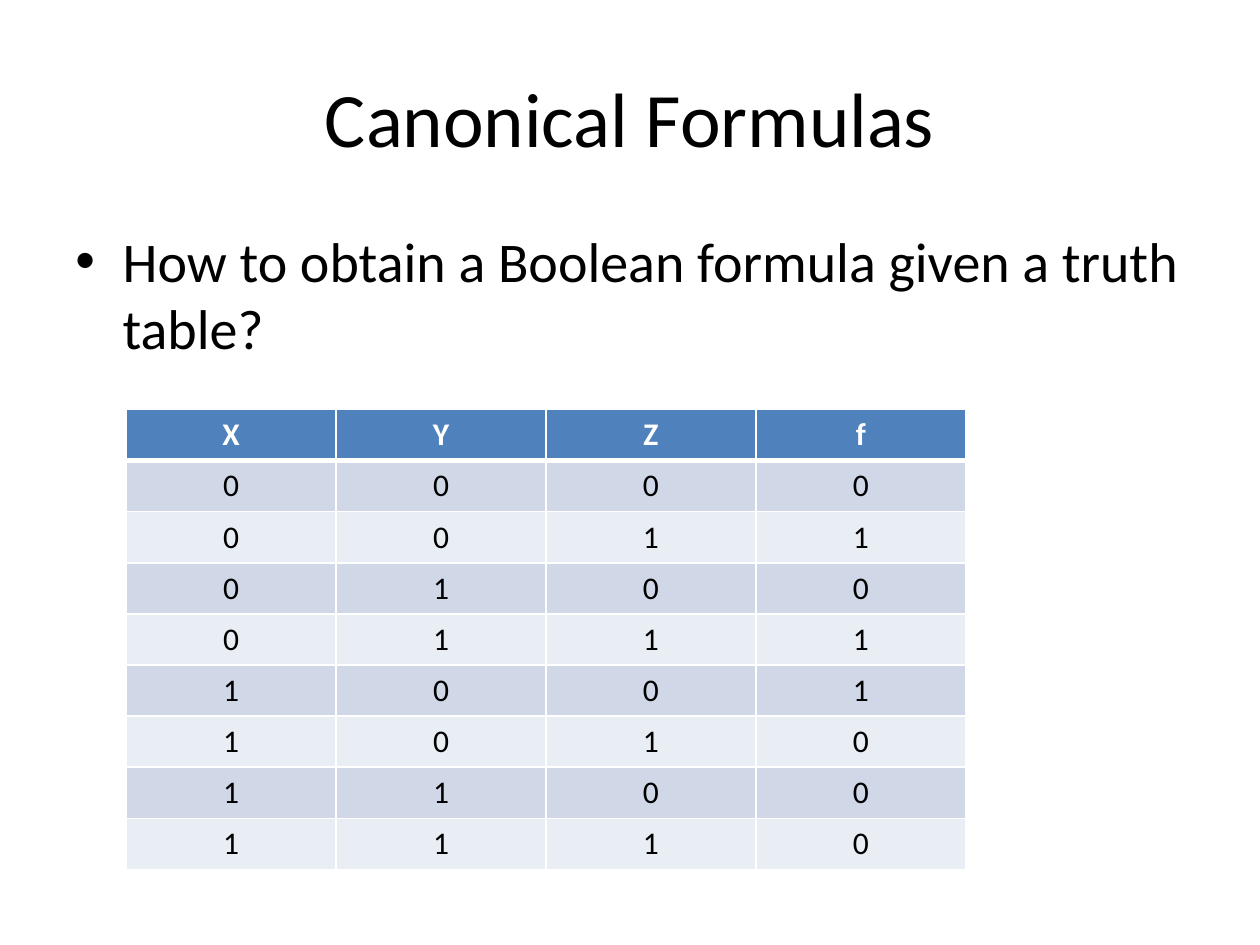
from itertools import product

from lxml import etree
from pptx import Presentation
from pptx.dml.color import RGBColor
from pptx.enum import text
from pptx.oxml import ns
from pptx.util import Pt

COLOURS = {
    "ink": "000000",
    "paper": "FFFFFF",
    "header": "4F81BD",
    "odd": "D0D8E8",
    "even": "E9EDF4",
}
OUTPUTS = [0, 1, 0, 1, 1, 0, 0, 0]


def add_element(parent, tag, **attributes):
    return etree.SubElement(parent, ns.qn(tag), attributes)


class SlideBuilder:
    font = "Calibri"

    def __init__(self, page):
        self.page = page

    def add_span(self, para, words, size, colour="ink", bold=False):
        span = para.add_run()
        span.text = words
        span.font.name = self.font
        span.font.size = Pt(size)
        span.font.bold = bold
        span.font.color.rgb = RGBColor.from_string(COLOURS[colour])

    def add_box(self, left, top, width, height, anchor):
        box = self.page.shapes.add_textbox(Pt(left), Pt(top), Pt(width), Pt(height))
        box.text_frame.word_wrap = True
        box.text_frame.vertical_anchor = anchor
        return box.text_frame.paragraphs[0]

    def add_title(self, words, left, top, width, height):
        para = self.add_box(left, top, width, height, text.MSO_ANCHOR.MIDDLE)
        para.alignment = text.PP_ALIGN.CENTER
        self.add_span(para, words, 44)

    def add_bullet(self, words, left, top, width, height, indent=27):
        para = self.add_box(left, top, width, height, text.MSO_ANCHOR.TOP)
        self.add_span(para, words, 32)
        properties = para._p.get_or_add_pPr()
        properties.set("marL", str(Pt(indent)))
        properties.set("indent", str(-Pt(indent)))
        spacing = add_element(properties, "a:spcBef")
        add_element(spacing, "a:spcPct", val="20000")
        add_element(properties, "a:buFont", typeface="Arial")
        add_element(properties, "a:buChar", char="•")

    def add_borders(self, cell, top, bottom):
        properties = cell._tc.get_or_add_tcPr()
        for side, width in zip("LRTB", (1, 1, top, bottom)):
            line = add_element(properties, f"a:ln{side}", w=str(Pt(width)))
            fill = add_element(line, "a:solidFill")
            add_element(fill, "a:srgbClr", val=COLOURS["paper"])

    def add_table(self, rows, left, top, column_width, row_height):
        columns = len(rows[0])
        table = self.page.shapes.add_table(
            len(rows), columns, Pt(left), Pt(top),
            Pt(column_width * columns), Pt(row_height * len(rows)),
        ).table
        for row in table.rows:
            row.height = Pt(row_height)
        for row, values in enumerate(rows):
            header = row == 0
            band = "header" if header else ("even", "odd")[row % 2]
            for column, value in enumerate(values):
                cell = table.cell(row, column)
                self.add_borders(cell, 3 if row == 1 else 1, 3 if header else 1)
                cell.fill.solid()
                cell.fill.fore_color.rgb = RGBColor.from_string(COLOURS[band])
                para = cell.text_frame.paragraphs[0]
                para.alignment = text.PP_ALIGN.CENTER
                self.add_span(para, str(value), 18, "paper" if header else "ink", header)


def main():
    deck = Presentation()
    deck.slide_width, deck.slide_height = Pt(720), Pt(540)
    builder = SlideBuilder(deck.slides.add_slide(deck.slide_layouts[6]))
    builder.add_title("Canonical Formulas", 36, 21.6, 648, 90)
    builder.add_bullet(
        "How to obtain a Boolean formula given a truth table?", 36, 126, 648, 356.4
    )
    inputs = product((0, 1), repeat=3)
    truth_rows = [(*bits, output) for bits, output in zip(inputs, OUTPUTS)]
    builder.add_table([("X", "Y", "Z", "f"), *truth_rows], 72, 234, 120, 29.2)
    deck.save("out.pptx")


if __name__ == "__main__":
    main()
